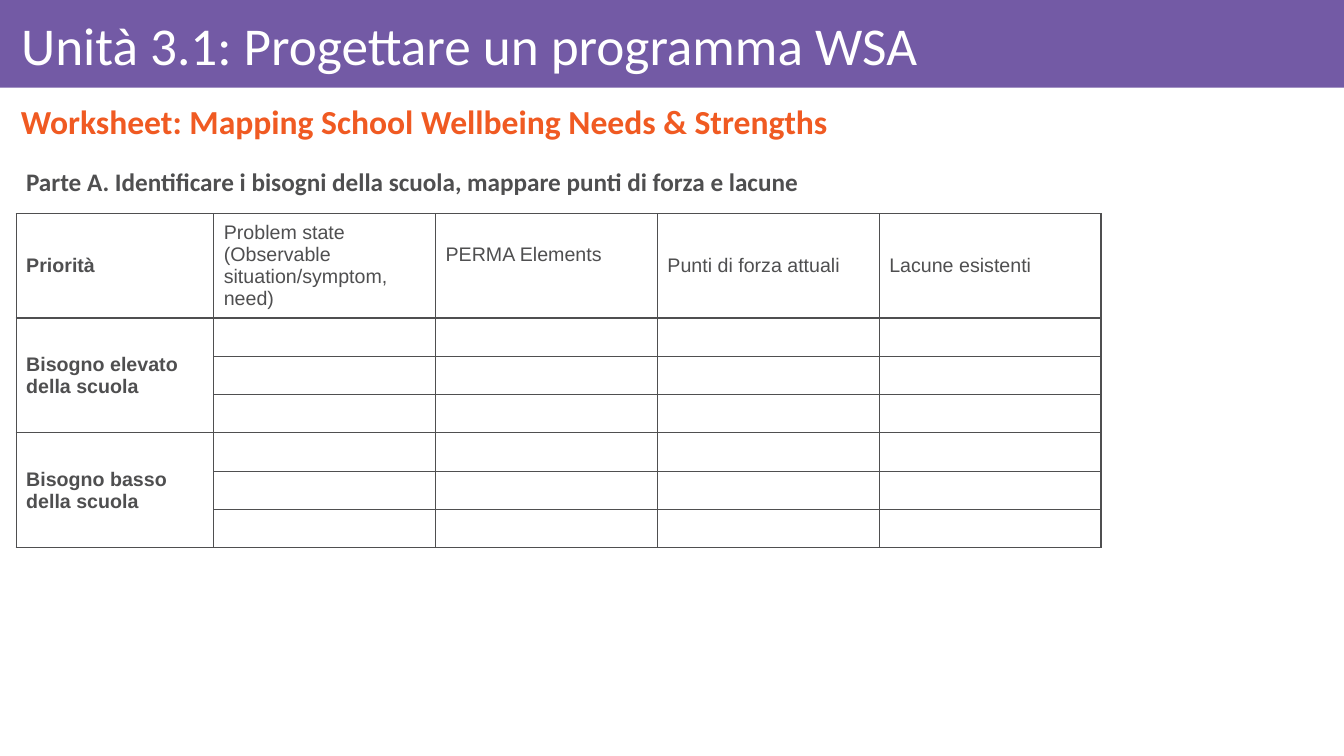
import pptx
import pptx.dml.color
import pptx.enum.shapes
import pptx.enum.text
import pptx.oxml
import pptx.oxml.ns
import pptx.util
from dataclasses import dataclass

Inches = pptx.util.Inches
Anchor = pptx.enum.text.MSO_ANCHOR

TITLE = "Unità 3.1: Progettare un programma WSA"
SUBTITLE = "Worksheet: Mapping School Wellbeing Needs & Strengths"
PART = "Parte A. Identificare i bisogni della scuola, mappare punti di forza e lacune"
HEADERS = [
    "Priorità",
    "Problem state (Observable situation/symptom, need)",
    "PERMA Elements",
    "Punti di forza attuali",
    "Lacune esistenti",
]
NEEDS = ["Bisogno elevato della scuola", "Bisogno basso della scuola"]
ROWS_PER_NEED = 3
COLUMN_WIDTHS = [1.96] + [2.2] * 4
ROW_HEIGHTS = [0.97] + [0.38] * (ROWS_PER_NEED * len(NEEDS))
RAISED_HEADER, RAISED_MARGIN = 2, 0.27


@dataclass(frozen=True)
class Theme:
    """Colours, fonts and type sizes of the slide."""
    purple: str = "735AA5"
    orange: str = "F05A22"
    grey: str = "4F4F50"
    white: str = "FFFFFF"
    heading_font: str = "Calibri"
    table_font: str = "Arial"
    title_size: int = 38
    subtitle_size: int = 24
    part_size: int = 18
    table_size: int = 14
    border_width: int = 1


THEME = Theme()


def write(frame, text, font, size, colour, bold=False):
    """Put one formatted paragraph in a text frame and return it."""
    frame.text = text
    frame.word_wrap = True
    paragraph = frame.paragraphs[0]
    for run in paragraph.runs:
        run.font.name = font
        run.font.size = pptx.util.Pt(size)
        run.font.bold = bold
        run.font.color.rgb = pptx.dml.color.RGBColor.from_string(colour)
    return paragraph


def add_bar(slide):
    """Draw the title band behind everything else."""
    bar = slide.shapes.add_shape(
        pptx.enum.shapes.MSO_SHAPE.RECTANGLE, 0, 0, Inches(13.33), Inches(0.87))
    bar.shadow.inherit = False
    bar.fill.solid()
    bar.fill.fore_color.rgb = pptx.dml.color.RGBColor.from_string(THEME.purple)
    bar.line.fill.background()
    slide.shapes._spTree.insert(2, bar._element)


def format_title(slide):
    """Place and format the title placeholder."""
    title = slide.shapes.title
    title.left, title.top = Inches(0.11), Inches(0.09)
    title.width, title.height = Inches(13.06), Inches(0.78)
    frame = title.text_frame
    paragraph = write(frame, TITLE, THEME.heading_font, THEME.title_size, THEME.white)
    paragraph.alignment = pptx.enum.text.PP_ALIGN.LEFT
    paragraph.line_spacing = 0.9
    frame.auto_size = pptx.enum.text.MSO_AUTO_SIZE.NONE
    frame.vertical_anchor = Anchor.MIDDLE
    frame.margin_left = Inches(0.1)
    frame.margin_right = frame.margin_top = frame.margin_bottom = Inches(0.06)


def add_heading(slide, text, box, size, colour, anchor):
    """Add a bold heading text box and return its paragraph."""
    frame = slide.shapes.add_textbox(*map(Inches, box)).text_frame
    frame.vertical_anchor = anchor
    return write(frame, text, THEME.heading_font, size, colour, True)


def add_borders(cell):
    """Draw a thin line on all four sides of a cell."""
    properties = cell._tc.get_or_add_tcPr()
    width = pptx.util.Pt(THEME.border_width)
    for index, side in enumerate("LRTB"):
        properties.insert(index, pptx.oxml.parse_xml(
            f'<a:ln{side} {pptx.oxml.ns.nsdecls("a")} w="{width}"><a:solidFill>'
            f'<a:srgbClr val="{THEME.grey}"/></a:solidFill></a:ln{side}>'))


def write_cell(cell, text, bold):
    """Fill a table cell with text at the table's type size."""
    write(cell.text_frame, text, THEME.table_font, THEME.table_size, THEME.grey, bold)


def add_worksheet(slide):
    """Add the table of needs, strengths and gaps."""
    table = slide.shapes.add_table(
        len(ROW_HEIGHTS), len(COLUMN_WIDTHS), Inches(0.16), Inches(2.12),
        Inches(sum(COLUMN_WIDTHS)), Inches(sum(ROW_HEIGHTS))).table
    table.first_row = table.horz_banding = False
    for column, width in zip(table.columns, COLUMN_WIDTHS):
        column.width = Inches(width)
    for row, height in zip(table.rows, ROW_HEIGHTS):
        row.height = Inches(height)
    for cell in table.iter_cells():
        cell.fill.background()
        cell.vertical_anchor = Anchor.MIDDLE
        add_borders(cell)
        cell.text_frame.paragraphs[0]._p.append(pptx.oxml.parse_xml(
            f'<a:endParaRPr {pptx.oxml.ns.nsdecls("a")} sz="{THEME.table_size * 100}"/>'))
    for index, header in enumerate(HEADERS):
        write_cell(table.cell(0, index), header, index == 0)
    table.cell(0, RAISED_HEADER).margin_bottom = Inches(RAISED_MARGIN)
    for index, need in enumerate(NEEDS):
        first = 1 + index * ROWS_PER_NEED
        table.cell(first, 0).merge(table.cell(first + ROWS_PER_NEED - 1, 0))
        write_cell(table.cell(first, 0), need, True)


def main():
    """Build the slide and save it."""
    presentation = pptx.Presentation()
    presentation.slide_width, presentation.slide_height = Inches(13.33), Inches(7.5)
    slide = presentation.slides.add_slide(presentation.slide_layouts[5])
    add_bar(slide)
    format_title(slide)
    subtitle = add_heading(slide, SUBTITLE, (0.11, 0.93, 13.06, 0.6),
                           THEME.subtitle_size, THEME.orange, Anchor.MIDDLE)
    subtitle.alignment = pptx.enum.text.PP_ALIGN.JUSTIFY
    subtitle.line_spacing = 0.9
    add_worksheet(slide)
    add_heading(slide, PART, (0.16, 1.6, 8.75, 0.4),
                THEME.part_size, THEME.grey, Anchor.TOP)
    presentation.save("out.pptx")


if __name__ == "__main__":
    main()
